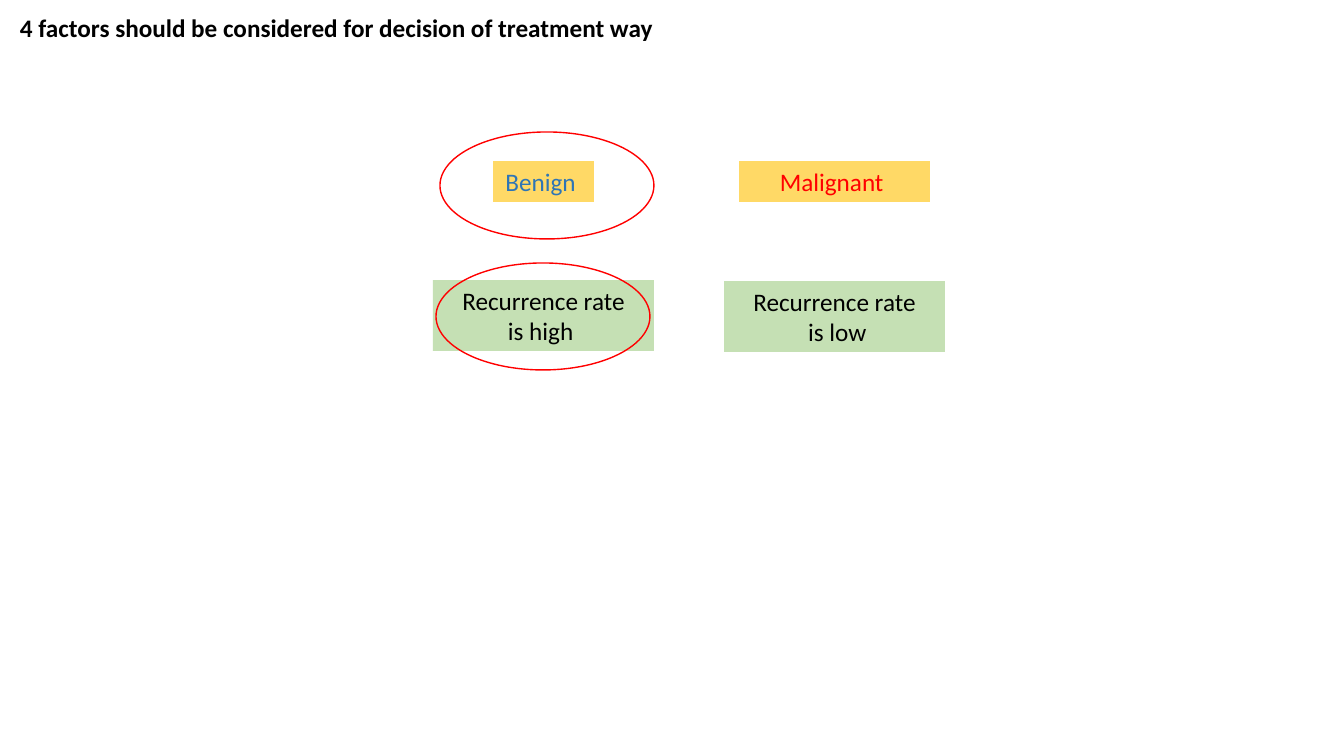
from dataclasses import dataclass

from pptx import Presentation
from pptx.dml.color import RGBColor
from pptx.enum.shapes import MSO_SHAPE as Shape
from pptx.enum.text import MSO_ANCHOR as Anchor, MSO_AUTO_SIZE as AutoSize, PP_ALIGN as Align
from pptx.slide import Slide
from pptx.text.text import TextFrame
from pptx.util import Emu, Pt

SLIDE_WIDTH, SLIDE_HEIGHT = 1344, 756
EMU_PER_PX = 12192000 / SLIDE_WIDTH

BLACK = RGBColor(0x00, 0x00, 0x00)
RED = RGBColor(0xFF, 0x00, 0x00)
BLUE = RGBColor(0x2E, 0x75, 0xB6)
YELLOW = RGBColor(0xFF, 0xD9, 0x66)
GREEN = RGBColor(0xC5, 0xE0, 0xB4)

FONT_NAME = "Calibri"
FONT_SIZE = Pt(18)
RING_WIDTH, RING_HEIGHT = 214, 107


@dataclass(frozen=True)
class Factor:
    lines: tuple[str, ...]
    left: int
    top: int
    width: int
    height: int
    fill: RGBColor
    color: RGBColor


@dataclass(frozen=True)
class Ring:
    left: int
    top: int


FACTORS = (
    Factor(("Benign ",), 493, 161, 101, 41, YELLOW, BLUE),
    Factor(("Malignant ",), 739, 161, 191, 41, YELLOW, RED),
    Factor(("Recurrence rate", "is high "), 433, 280, 221, 71, GREEN, BLACK),
    Factor(("Recurrence rate", " is low"), 724, 281, 221, 71, GREEN, BLACK),
)
RINGS = (Ring(440, 132), Ring(436, 263))


def px(length: int) -> Emu:
    return Emu(round(length * EMU_PER_PX))


def write_lines(frame: TextFrame, lines: tuple[str, ...], color: RGBColor,
                align: Align, bold: bool = False) -> None:
    frame.word_wrap = True
    frame.auto_size = AutoSize.SHAPE_TO_FIT_TEXT
    frame.vertical_anchor = Anchor.TOP
    for index, line in enumerate(lines):
        para = frame.add_paragraph() if index else frame.paragraphs[0]
        para.alignment = align
        span = para.add_run()
        span.text = line
        span.font.name = FONT_NAME
        span.font.size = FONT_SIZE
        span.font.bold = bold
        span.font.color.rgb = color


def add_factor(page: Slide, factor: Factor) -> None:
    box = page.shapes.add_shape(Shape.RECTANGLE, px(factor.left), px(factor.top),
                                px(factor.width), px(factor.height))
    box.shadow.inherit = False
    box.fill.solid()
    box.fill.fore_color.rgb = factor.fill
    box.line.fill.background()
    write_lines(box.text_frame, factor.lines, factor.color, Align.CENTER)


def add_ring(page: Slide, ring: Ring) -> None:
    oval = page.shapes.add_shape(Shape.OVAL, px(ring.left), px(ring.top),
                                 px(RING_WIDTH), px(RING_HEIGHT))
    oval.shadow.inherit = False
    oval.fill.background()
    oval.line.color.rgb = RED
    oval.line.width = Pt(1)


def add_title(page: Slide) -> None:
    box = page.shapes.add_textbox(px(10), px(7), px(846), px(41))
    write_lines(box.text_frame,
                ("4 factors should be considered for decision of treatment way",),
                BLACK, Align.LEFT, bold=True)


def main() -> None:
    deck = Presentation()
    deck.slide_width = px(SLIDE_WIDTH)
    deck.slide_height = px(SLIDE_HEIGHT)
    page = deck.slides.add_slide(deck.slide_layouts[6])
    for factor in FACTORS:
        add_factor(page, factor)
    for ring in RINGS:
        add_ring(page, ring)
    add_title(page)
    deck.save("out.pptx")


if __name__ == "__main__":
    main()
